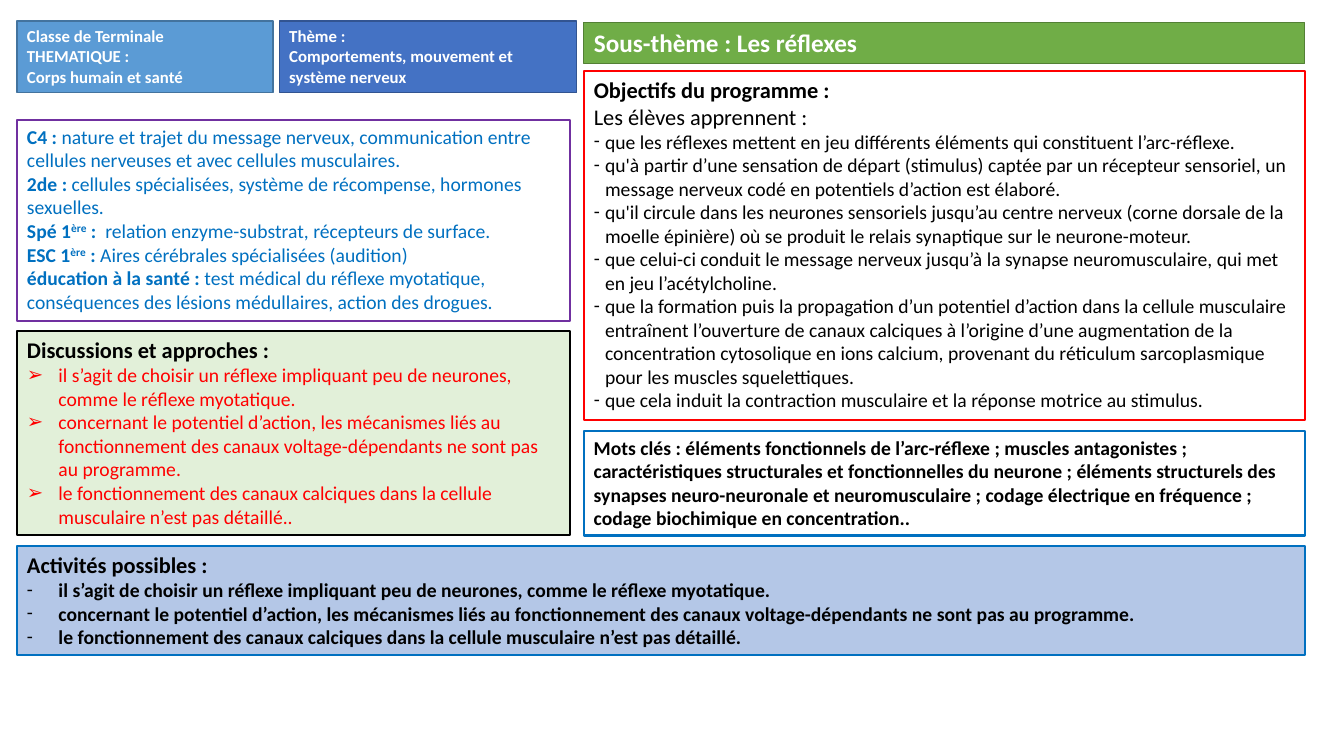
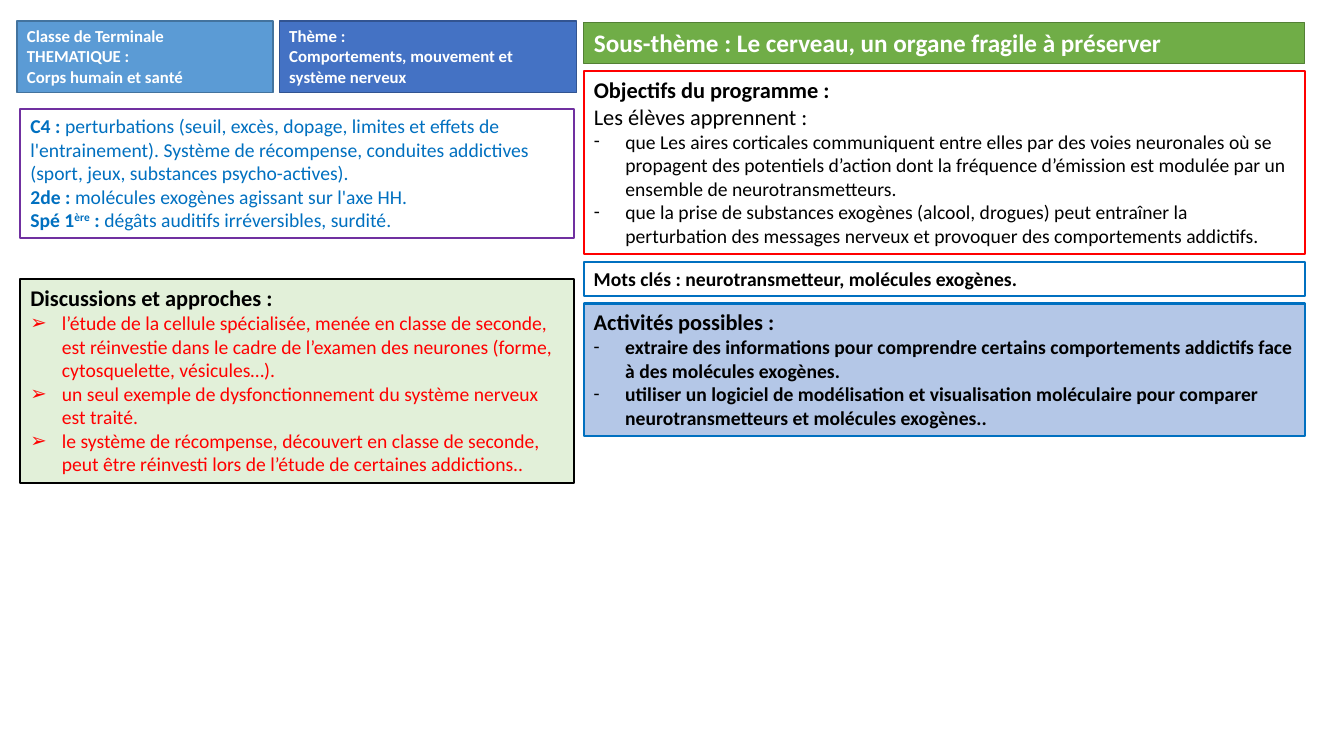
"""Builds two lesson sheets on reflexes and the brain."""
from dataclasses import dataclass
from typing import Optional

from lxml.etree import SubElement as add_node
from pptx import Presentation
from pptx.dml.color import RGBColor as Color
from pptx.enum.shapes import MSO_SHAPE as Form
from pptx.enum.text import MSO_ANCHOR as Anchor, MSO_AUTO_SIZE as Fit, PP_ALIGN as Align
from pptx.oxml.ns import qn
from pptx.shapes.autoshape import Shape
from pptx.slide import Slide
from pptx.util import Pt


@dataclass(frozen=True)
class Theme:
    font: str = "Calibri"
    white: str = "FFFFFF"
    black: str = "000000"
    red: str = "FF0000"
    blue: str = "0070C0"
    small: float = 12
    text: float = 14
    head: float = 16
    title: float = 18
    thin: float = 1
    thick: float = 1.5


@dataclass(frozen=True)
class Look:
    line: str
    width: float
    fill: Optional[str] = None


@dataclass(frozen=True)
class Box:
    left: float
    top: float
    width: float
    height: float


@dataclass(frozen=True)
class Bit:
    text: str
    bold: bool = False
    raised: bool = False


@dataclass(frozen=True)
class Para:
    bits: list[Bit]
    size: float
    color: str
    mark: str = ""
    dent: float = 0
    align: Align = Align.LEFT


@dataclass(frozen=True)
class Side:
    left: float
    top: float
    gap: float
    heights: list[float]


@dataclass(frozen=True)
class Page:
    title: str
    goals: list[str]
    dent: float
    recall: list[list[Bit]]
    talk: list[str]
    keys: str
    tasks: list[str]
    west: Side
    east: Side
    wide: bool


THEME = Theme()
CLASS = Look("43739E", THEME.thin, "5B9BD5")
TOPIC = Look("325491", THEME.thin, "4472C4")
TITLE = Look("538035", THEME.thin, "70AD47")
GOALS = Look(THEME.red, THEME.thick)
RECALL = Look("7030A0", THEME.thick)
TALK = Look(THEME.black, THEME.thick, "E2F0D9")
KEYS = Look(THEME.blue, THEME.thick)
TASKS = Look(THEME.blue, THEME.thick, "B4C7E7")
EDGE, SPLIT, RIGHT = 12.2, 417, 932
WEST, EAST = 395.3, RIGHT - SPLIT
DENT = 22.5


def stack(side: Side, width: float) -> list[Box]:
    boxes, top = [], side.top
    for height in side.heights:
        boxes.append(Box(side.left, top, width, height))
        top += height + side.gap
    return boxes


def plain(text: str, size: float, color: str = THEME.black, bold: bool = True,
          align: Align = Align.LEFT) -> Para:
    return Para([Bit(text, bold)], size, color, align=align)


def points(texts: list[str], mark: str, dent: float = DENT,
           color: str = THEME.black, bold: bool = False) -> list[Para]:
    return [Para([Bit(text, bold)], THEME.text, color, mark, dent) for text in texts]


def pair(label: str, text: str) -> list[Bit]:
    return [Bit(label, True), Bit(text)]


def grade(label: str, text: str) -> list[Bit]:
    return [Bit(label, True), Bit("ère", True, True), Bit(" : ", True), Bit(text)]


def write(shape: Shape, paras: list[Para]) -> None:
    frame = shape.text_frame
    frame.word_wrap = True
    frame.auto_size = Fit.NONE
    frame.vertical_anchor = Anchor.TOP
    frame.margin_left = frame.margin_right = Pt(7.2)
    frame.margin_top = frame.margin_bottom = Pt(3.6)
    for rank, para in enumerate(paras):
        line = frame.add_paragraph() if rank else frame.paragraphs[0]
        line.alignment = para.align
        line.line_spacing = 1.0
        line.space_before = line.space_after = Pt(0)
        props = line._p.get_or_add_pPr()
        props.set("marL", str(Pt(para.dent)))
        props.set("indent", str(-Pt(para.dent)))
        if para.mark:
            add_node(props, qn("a:buFont"), typeface=THEME.font)
            add_node(props, qn("a:buChar"), char=para.mark)
        else:
            add_node(props, qn("a:buNone"))
        for bit in para.bits:
            run = line.add_run()
            run.text = bit.text
            font = run.font
            font.name, font.size, font.bold = THEME.font, Pt(para.size), bit.bold
            font.color.rgb = Color.from_string(para.color)
            if bit.raised:
                run._r.get_or_add_rPr().set("baseline", "30000")


def dress(shape: Shape, box: Box, look: Look, paras: list[Para]) -> None:
    shape.left, shape.top = Pt(box.left), Pt(box.top)
    shape.width, shape.height = Pt(box.width), Pt(box.height)
    shape.shadow.inherit = False
    if look.fill:
        shape.fill.solid()
        shape.fill.fore_color.rgb = Color.from_string(look.fill)
    else:
        shape.fill.background()
    shape.line.color.rgb = Color.from_string(look.line)
    shape.line.width = Pt(look.width)
    write(shape, paras)


def panel(slide: Slide, box: Box, look: Look, paras: list[Para]) -> None:
    shape = slide.shapes.add_shape(Form.RECTANGLE, 0, 0, 0, 0)
    dress(shape, box, look, paras)


def band(slide: Slide, title: str) -> None:
    tags = [
        (Box(EDGE, 15, 183, 51.2), CLASS,
         ["Classe de Terminale", "THEMATIQUE :", "Corps humain et santé"]),
        (Box(199.5, 15, 212.5, 51.2), TOPIC,
         ["Thème :", "Comportements, mouvement et système nerveux"]),
    ]
    for box, look, texts in tags:
        panel(slide, box, look, [plain(text, THEME.small, THEME.white) for text in texts])
    dress(slide.shapes.title, Box(SPLIT, 16.2, EAST, 29), TITLE,
          [plain(title, THEME.title, THEME.white)])


def draw(slide: Slide, page: Page) -> None:
    band(slide, page.title)
    recall, talk = stack(page.west, WEST)
    goals, keys, tasks = stack(page.east, EAST)
    if page.wide:
        tasks = Box(EDGE, tasks.top, RIGHT - EDGE, tasks.height)
    dress(slide.placeholders[1], goals, GOALS, [
        plain("Objectifs du programme :", THEME.head, align=Align.JUSTIFY),
        plain("Les élèves apprennent :", THEME.head, bold=False, align=Align.JUSTIFY),
        *points(page.goals, "-", page.dent)])
    panel(slide, recall, RECALL,
          [Para(bits, THEME.text, THEME.blue) for bits in page.recall])
    panel(slide, talk, TALK, [plain("Discussions et approches :", THEME.head),
                              *points(page.talk, "➢", color=THEME.red)])
    panel(slide, keys, KEYS, [plain(page.keys, THEME.text)])
    panel(slide, tasks, TASKS, [plain("Activités possibles :", THEME.head),
                                *points(page.tasks, "-", bold=True)])


PAGES = [
    Page(
        title="Sous-thème : Les réflexes",
        goals=[
            "que les réflexes mettent en jeu différents éléments qui constituent l’arc-réflexe.",
            "qu'à partir d’une sensation de départ (stimulus) captée par un récepteur sensoriel, "
            "un message nerveux codé en potentiels d’action est élaboré.",
            "qu'il circule dans les neurones sensoriels jusqu’au centre nerveux (corne dorsale "
            "de la moelle épinière) où se produit le relais synaptique sur le neurone-moteur.",
            "que celui-ci conduit le message nerveux jusqu’à la synapse neuromusculaire, "
            "qui met en jeu l’acétylcholine.",
            "que la formation puis la propagation d’un potentiel d’action dans la cellule "
            "musculaire entraînent l’ouverture de canaux calciques à l’origine d’une "
            "augmentation de la concentration cytosolique en ions calcium, provenant du "
            "réticulum sarcoplasmique pour les muscles squelettiques.",
            "que cela induit la contraction musculaire et la réponse motrice au stimulus.",
        ],
        dent=8,
        recall=[
            pair("C4 : ", "nature et trajet du message nerveux, communication entre cellules "
                 "nerveuses et avec cellules musculaires."),
            pair("2de : ", "cellules spécialisées, système de récompense, hormones sexuelles."),
            grade("Spé 1", " relation enzyme-substrat, récepteurs de surface."),
            grade("ESC 1", "Aires cérébrales spécialisées (audition)"),
            pair("éducation à la santé : ", "test médical du réflexe myotatique, conséquences "
                 "des lésions médullaires, action des drogues."),
        ],
        talk=[
            "il s’agit de choisir un réflexe impliquant peu de neurones, comme le réflexe "
            "myotatique.",
            "concernant le potentiel d’action, les mécanismes liés au fonctionnement des canaux "
            "voltage-dépendants ne sont pas au programme.",
            "le fonctionnement des canaux calciques dans la cellule musculaire n’est pas "
            "détaillé..",
        ],
        keys="Mots clés : éléments fonctionnels de l’arc-réflexe ; muscles antagonistes ; "
             "caractéristiques structurales et fonctionnelles du neurone ; éléments structurels "
             "des synapses neuro-neuronale et neuromusculaire ; codage électrique en fréquence ; "
             "codage biochimique en concentration..",
        tasks=[
            "il s’agit de choisir un réflexe impliquant peu de neurones, comme le réflexe "
            "myotatique.",
            "concernant le potentiel d’action, les mécanismes liés au fonctionnement des canaux "
            "voltage-dépendants ne sont pas au programme.",
            "le fonctionnement des canaux calciques dans la cellule musculaire n’est pas "
            "détaillé.",
        ],
        west=Side(EDGE, 85.6, 7.6, [143.5, 145.5]),
        east=Side(SPLIT, 50.5, 7.6, [249.5, 75, 78]),
        wide=True,
    ),
    Page(
        title="Sous-thème : Le cerveau, un organe fragile à préserver",
        goals=[
            "que Les aires corticales communiquent entre elles par des voies neuronales où se "
            "propagent des potentiels d’action dont la fréquence d’émission est modulée par un "
            "ensemble de neurotransmetteurs.",
            "que la prise de substances exogènes (alcool, drogues) peut entraîner la "
            "perturbation des messages nerveux et provoquer des comportements addictifs.",
        ],
        dent=DENT,
        recall=[
            pair("C4 : ", "perturbations (seuil, excès, dopage, limites et effets de "
                 "l'entrainement). Système de récompense, conduites addictives (sport, jeux, "
                 "substances psycho-actives)."),
            pair("2de : ", "molécules exogènes agissant sur l'axe HH."),
            grade("Spé 1", "dégâts auditifs irréversibles, surdité."),
        ],
        talk=[
            "l’étude de la cellule spécialisée, menée en classe de seconde, est réinvestie dans "
            "le cadre de l’examen des neurones (forme, cytosquelette, vésicules…).",
            "un seul exemple de dysfonctionnement du système nerveux est traité.",
            "le système de récompense, découvert en classe de seconde, peut être réinvesti lors "
            "de l’étude de certaines addictions..",
        ],
        keys="Mots clés : neurotransmetteur, molécules exogènes.",
        tasks=[
            "extraire des informations pour comprendre certains comportements addictifs face à "
            "des molécules exogènes.",
            "utiliser un logiciel de modélisation et visualisation moléculaire pour comparer "
            "neurotransmetteurs et molécules exogènes..",
        ],
        west=Side(14.6, 77.8, 29.5, [92.2, 145.5]),
        east=Side(SPLIT, 50.5, 5.5, [131, 24.3, 94.5]),
        wide=False,
    ),
]


def main() -> None:
    deck = Presentation()
    deck.slide_width, deck.slide_height = Pt(960), Pt(540)
    for page in PAGES:
        draw(deck.slides.add_slide(deck.slide_layouts[1]), page)
    deck.save("out.pptx")


if __name__ == "__main__":
    main()
